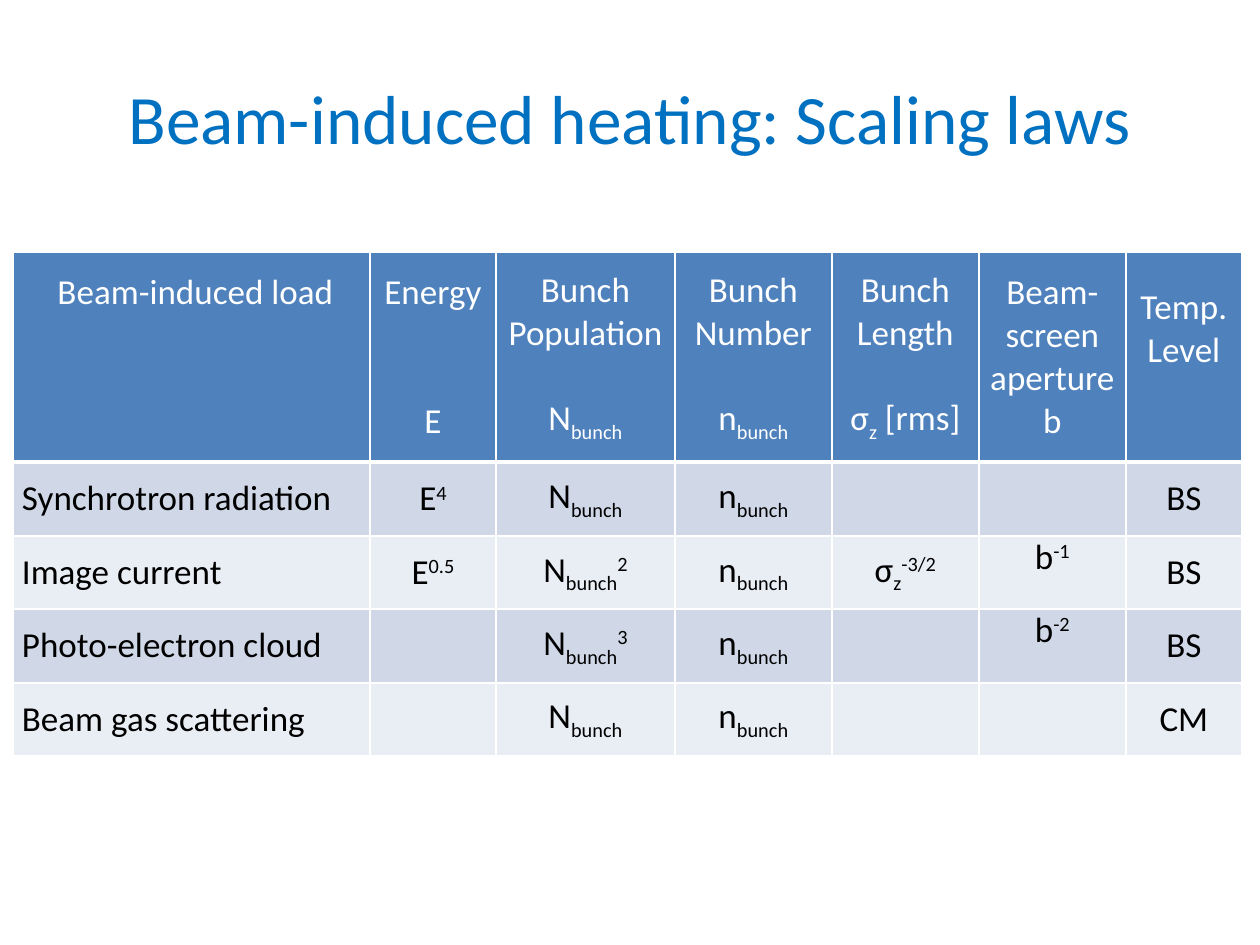
"""Build a slide with a table of scaling laws for beam-induced heating."""
from dataclasses import dataclass
from itertools import product

from lxml import etree
from pptx import Presentation
from pptx.dml.color import RGBColor
from pptx.enum.text import MSO_ANCHOR, PP_ALIGN
from pptx.oxml.ns import qn
from pptx.slide import Slide
from pptx.util import Emu, Pt

CENTER, LEFT = PP_ALIGN.CENTER, PP_ALIGN.LEFT
MIDDLE, TOP = MSO_ANCHOR.MIDDLE, MSO_ANCHOR.TOP
COLORS = {"title": "0070C0", "header": "4F81BD", "odd": "D0D8E8",
          "even": "E9EDF4", "white": "FFFFFF", "black": "000000"}
BASELINES = {"=": 0, "_": -25000, "^": 30000}
COLUMN_WIDTHS = [357, 126, 179, 157, 147, 147, 116]
ROW_HEIGHTS = [210, 74, 73, 74, 73]
LINE = 43
APERTURE_COLUMN = 5

HEADERS = [
    (" Beam-induced load", 0, 3 * LINE),
    ("Energy\nE", 2 * LINE, 0),
    ("Bunch Population\nN_bunch", LINE, 0),
    ("Bunch\nNumber\nn_bunch", LINE, 0),
    ("Bunch\nLength\nσ_z= [rms]", LINE, 0),
    ("Beam-screen aperture\nb", 0, 0),
    ("Temp.\nLevel", 0, 56),
]
LAWS = [
    ["Synchrotron radiation", "E^4", "N_bunch", "n_bunch", "", "", "BS"],
    ["Image current", "E^0.5", "N_bunch^2", "n_bunch", "σ_z^-3/2", "b^-1", "BS"],
    ["Photo-electron cloud", "", "N_bunch^3", "n_bunch", "", "b^-2", "BS"],
    ["Beam gas scattering", "", "N_bunch", "n_bunch", "", "", "CM"],
]


def px(length):
    """Convert pixels to EMU."""
    return Emu(round(length * 914400 / 126))


def rgb(name):
    """Look up a named colour."""
    return RGBColor.from_string(COLORS[name])


def split_baselines(marked):
    """Split marked text into pairs of text and baseline."""
    parts = [["", 0]]
    for char in marked:
        if char in BASELINES:
            parts.append(["", BASELINES[char]])
        else:
            parts[-1][0] += char
    return parts


@dataclass
class SlideBuilder:
    """Hold the style and the current slide."""
    slide: Slide
    font: str = "Calibri"
    cell_size: float = 20
    title_size: float = 39.6

    def add_line(self, paragraph, marked, size, color, align):
        """Put marked text into a paragraph."""
        paragraph.alignment = align
        for text, baseline in split_baselines(marked):
            run = paragraph.add_run()
            run.text = text
            run.font.name = self.font
            run.font.size = Pt(size)
            run.font.bold = False
            run.font.color.rgb = rgb(color)
            if baseline:
                run.font._element.set("baseline", str(baseline))

    def title(self, text, left, top, width, height):
        """Add the centred title."""
        frame = self.slide.shapes.add_textbox(
            px(left), px(top), px(width), px(height)).text_frame
        frame.word_wrap = True
        frame.vertical_anchor = MIDDLE
        self.add_line(frame.paragraphs[0], text, self.title_size, "title", CENTER)

    def table(self, left, top, widths, heights):
        """Add an empty table and return it."""
        table = self.slide.shapes.add_table(
            len(heights), len(widths), px(left), px(top),
            px(sum(widths)), px(sum(heights))).table
        for column, width in zip(table.columns, widths):
            column.width = px(width)
        for row, height in zip(table.rows, heights):
            row.height = px(height)
        return table

    def borders(self, cell, bottom):
        """Draw white cell borders, with widths in points."""
        properties = cell._tc.get_or_add_tcPr()
        for side, width in (("L", 1), ("R", 1), ("T", 1), ("B", bottom)):
            line = etree.SubElement(properties, qn(f"a:ln{side}"), w=str(Pt(width)))
            fill = etree.SubElement(line, qn("a:solidFill"))
            etree.SubElement(fill, qn("a:srgbClr"), val=COLORS["white"])

    def cell(self, cell, marked, fill, color="black", align=CENTER,
             anchor=MIDDLE, gap=0, margin_bottom=0, border_bottom=1):
        """Fill one table cell."""
        self.borders(cell, border_bottom)
        cell.fill.solid()
        cell.fill.fore_color.rgb = rgb(fill)
        cell.vertical_anchor = anchor
        cell.margin_left = cell.margin_right = px(9)
        cell.margin_top, cell.margin_bottom = 0, px(margin_bottom)
        frame = cell.text_frame
        for index, line in enumerate(marked.split("\n")):
            paragraph = frame.add_paragraph() if index else frame.paragraphs[0]
            self.add_line(paragraph, line, self.cell_size, color, align)
        if gap:
            paragraph.space_before = px(gap)


def main():
    """Build and save the slide."""
    deck = Presentation()
    deck.slide_width, deck.slide_height = px(1260), px(945)
    builder = SlideBuilder(deck.slides.add_slide(deck.slide_layouts[6]))
    builder.title("Beam-induced heating: Scaling laws", 63, 38, 1134, 157)
    laws = builder.table(13, 252, COLUMN_WIDTHS, ROW_HEIGHTS)
    for column, (heading, gap, margin) in enumerate(HEADERS):
        builder.cell(laws.cell(0, column), heading, "header", "white", gap=gap,
                     margin_bottom=margin, border_bottom=3)
    for row, column in product(range(len(LAWS)), range(len(HEADERS))):
        builder.cell(laws.cell(row + 1, column), LAWS[row][column],
                     "even" if row % 2 else "odd",
                     align=CENTER if column else LEFT,
                     anchor=TOP if column == APERTURE_COLUMN else MIDDLE)
    deck.save("out.pptx")


if __name__ == "__main__":
    main()
